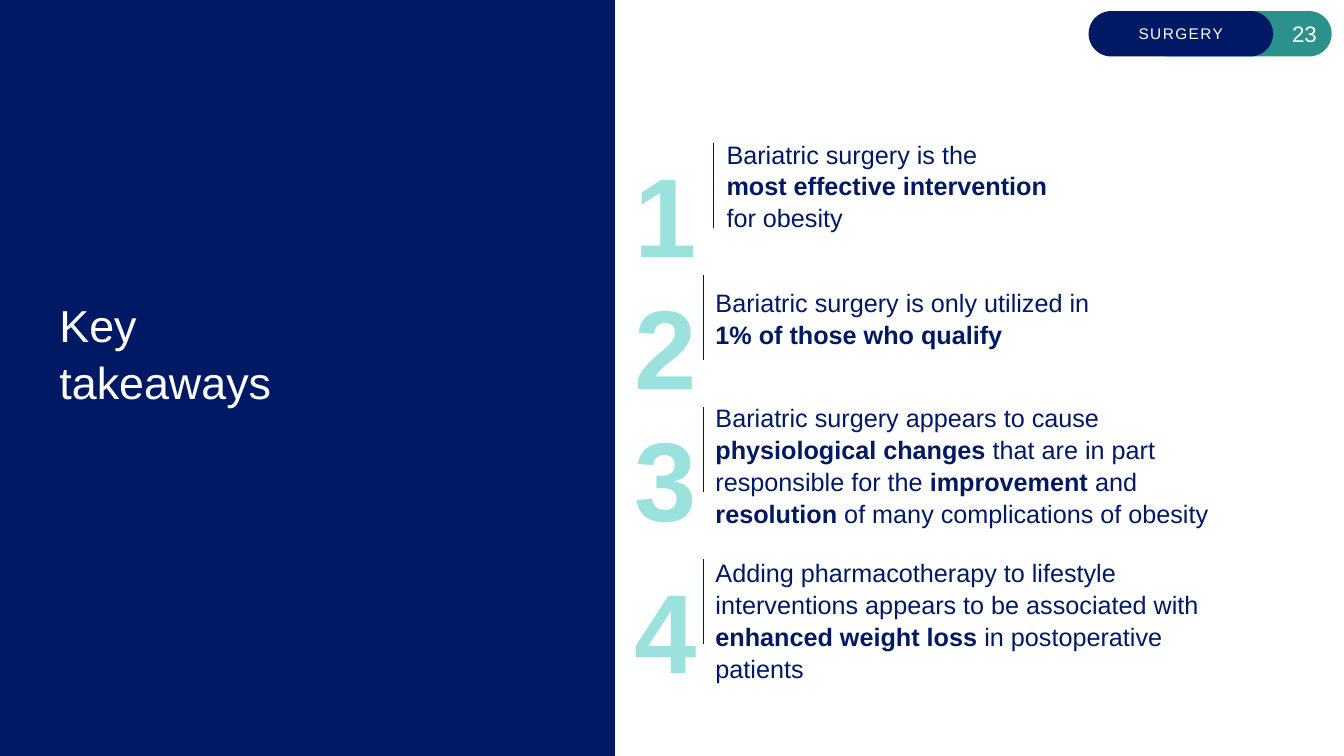
import pptx
import pptx.util
import pptx.dml.color
import pptx.enum.shapes
import pptx.enum.text
import pptx.oxml.ns
from lxml import etree

Pt = pptx.util.Pt
RGBColor = pptx.dml.color.RGBColor
ALIGN = pptx.enum.text.PP_ALIGN
ANCHOR = pptx.enum.text.MSO_ANCHOR
SHAPES = pptx.enum.shapes.MSO_SHAPE

NAVY = RGBColor(0x00, 0x19, 0x65)
TEAL = RGBColor(0x2A, 0x91, 0x8B)
AQUA = RGBColor(0x9B, 0xE2, 0xDE)
WHITE = RGBColor(0xFF, 0xFF, 0xFF)

# Number box top, rule left, text box (left, top, width, height), anchor, (words, bold) spans
TAKEAWAYS = [
    (74.9, 509.8, (511.9, 95.8, 297.4, 72.7), ANCHOR.MIDDLE,
     [("Bariatric surgery is the \v", False),
      ("most effective intervention", True),
      (" for\u00a0obesity", False)]),
    (169.2, 502.6, (504, 201.6, 285.1, 51.1), ANCHOR.MIDDLE,
     [("Bariatric surgery is only utilized in ", False),
      ("1% of those who qualify", True)]),
    (263.5, 502.6, (504, 283, 400.3, 94.3), ANCHOR.TOP,
     [("Bariatric surgery appears to cause ", False),
      ("physiological changes", True),
      (" that are in part responsible for the ", False),
      ("improvement", True),
      (" and ", False),
      ("resolution", True),
      (" of many complications of obesity", False)]),
    (372.2, 502.6, (504, 393.8, 400.3, 94.3), ANCHOR.TOP,
     [("Adding pharmacotherapy to lifestyle interventions appears to be "
       "associated with ", False),
      ("enhanced weight loss ", True),
      ("in postoperative patients", False)]),
]
NUMBER_LEFT = 452.9
RULE_DROP = 27.3
RULE_LENGTH = 60.5


def points(*lengths):
    return [Pt(length) for length in lengths]


def style(para, size, color, spacing=1.0, bold=None):
    para.line_spacing = spacing
    para.font.name = "Arial"
    para.font.size = Pt(size)
    para.font.color.rgb = color
    para.font.bold = bold


def set_margins(frame, side, end):
    frame.margin_left = frame.margin_right = Pt(side)
    frame.margin_top = frame.margin_bottom = Pt(end)


def add_block(page, kind, area, color):
    block = page.shapes.add_shape(kind, *points(*area))
    block.shadow.inherit = False
    block.fill.solid()
    block.fill.fore_color.rgb = color
    block.line.fill.background()
    return block


def add_pill(page, left, color, label, size, align):
    pill = add_block(page, SHAPES.ROUNDED_RECTANGLE, (left, 7.9, 131.8, 32.4), color)
    pill.adjustments[0] = 0.5
    frame = pill.text_frame
    set_margins(frame, 5.8, 2.9)
    frame.vertical_anchor = ANCHOR.MIDDLE
    para = frame.paragraphs[0]
    para.text = label
    para.alignment = align
    style(para, size, WHITE)
    return para


def add_text(page, area, anchor=ANCHOR.TOP, wrap=True, margins=(0, 0)):
    """Add an empty text box and return its first paragraph."""
    frame = page.shapes.add_textbox(*points(*area)).text_frame
    frame.word_wrap = wrap
    frame.vertical_anchor = anchor
    set_margins(frame, *margins)
    return frame.paragraphs[0]


def add_rule(page, left, top):
    rule = page.shapes.add_connector(
        pptx.enum.shapes.MSO_CONNECTOR.STRAIGHT,
        *points(left, top, left, top + RULE_LENGTH))
    rule.line.color.rgb = NAVY
    rule.line.width = Pt(1)
    etree.SubElement(rule._element.spPr, pptx.oxml.ns.qn("a:effectLst"))


def add_takeaway(page, number, top, rule_left, area, anchor, spans):
    digit = add_text(page, (NUMBER_LEFT, top, 44.6, 105.8), wrap=False)
    digit.text = str(number)
    style(digit, 80, AQUA, 1.3, True)

    para = add_text(page, area, anchor, margins=(7.2, 3.6))
    for words, bold in spans:
        span = para.add_run()
        span.text = words.rstrip("\v")
        span.font.bold = bold
        if words.endswith("\v"):
            para.add_line_break()
    style(para, 18, NAVY, 1.05)

    add_rule(page, rule_left, top + RULE_DROP)


def main():
    deck = pptx.Presentation()
    deck.slide_width, deck.slide_height = points(960, 540)
    page = deck.slides.add_slide(deck.slide_layouts[6])

    add_block(page, SHAPES.RECTANGLE, (0, 0, 439.2, 540), NAVY)
    add_pill(page, 819.4, TEAL, "23", 16, ALIGN.RIGHT)
    section = add_pill(page, 777.6, NAVY, "SURGERY", 11, ALIGN.CENTER)
    section.runs[0].font._element.set("spc", "100")

    title = add_text(page, (42.5, 32.4, 364.3, 437.8), ANCHOR.MIDDLE)
    title.text = "Key \vtakeaways"
    style(title, 32, WHITE, 1.05)

    for number, takeaway in enumerate(TAKEAWAYS, 1):
        add_takeaway(page, number, *takeaway)

    deck.save("out.pptx")


if __name__ == "__main__":
    main()
